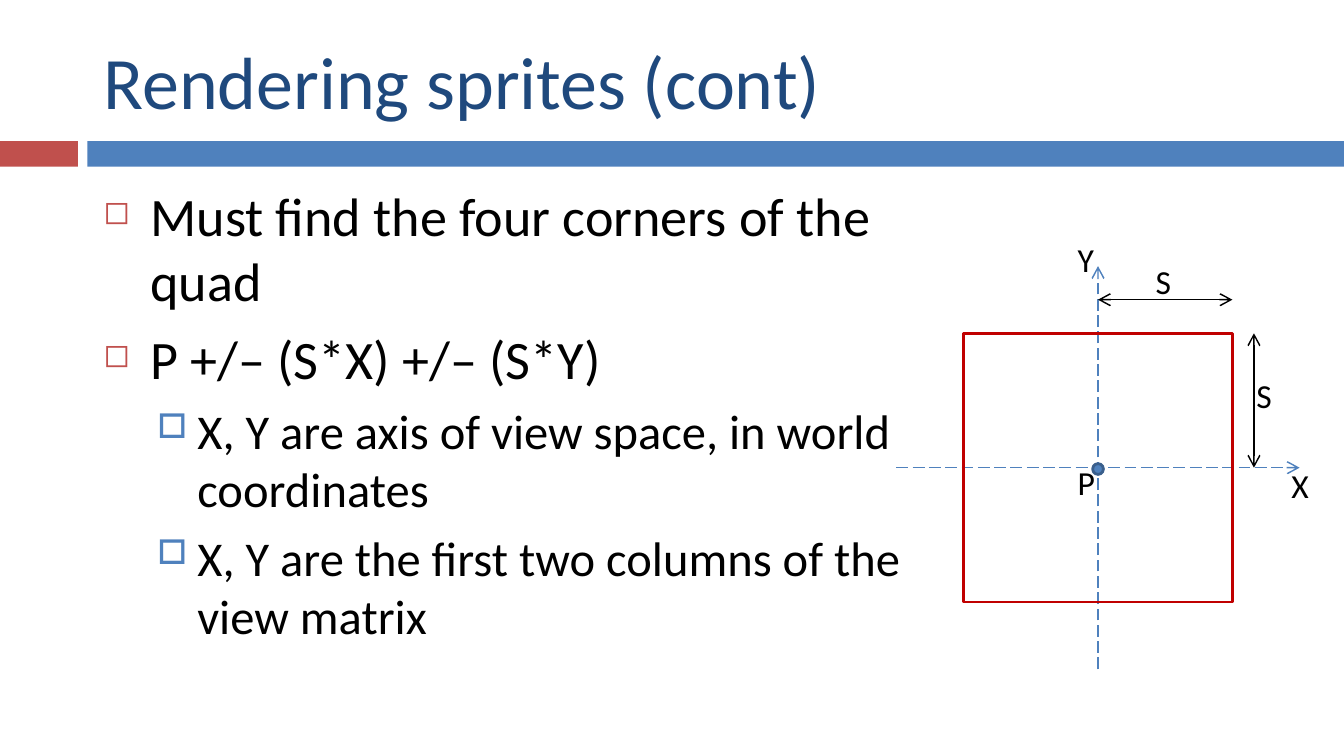
from lxml import etree
from pptx import Presentation
from pptx.dml.color import RGBColor
from pptx.enum.dml import MSO_LINE
from pptx.enum.shapes import MSO_CONNECTOR, MSO_SHAPE
from pptx.enum.text import MSO_ANCHOR, MSO_AUTO_SIZE, PP_ALIGN
from pptx.oxml.ns import qn
from pptx.util import Inches, Pt

RECTANGLE, ELLIPSE = MSO_SHAPE.RECTANGLE, MSO_SHAPE.OVAL
STRAIGHT = MSO_CONNECTOR.STRAIGHT
LONG_DASH = MSO_LINE.LONG_DASH
LEFT = PP_ALIGN.LEFT
TOP, MIDDLE = MSO_ANCHOR.TOP, MSO_ANCHOR.MIDDLE
FIT_SHAPE, NO_FIT = MSO_AUTO_SIZE.SHAPE_TO_FIT_TEXT, MSO_AUTO_SIZE.NONE

NAVY = RGBColor(0x1F, 0x49, 0x7D)
BLUE = RGBColor(0x4F, 0x81, 0xBD)
DARK_BLUE = RGBColor(0x3A, 0x5F, 0x8C)
BRICK = RGBColor(0xC0, 0x50, 0x4D)
RED = RGBColor(0xC0, 0x00, 0x00)
BLACK = RGBColor(0x00, 0x00, 0x00)

FONT = "Calibri"
THIN, THICK = 0.79, 1.5
PAGE_WIDTH = Inches(10)
PAGE_HEIGHT = PAGE_WIDTH * 9 // 16

# Per level: text size, space before, left indent, hanging, bullet, colour, bullet %
LEVELS = [
    (29, 7, 0.35, 0.35, "◻", BRICK, 60),
    (26, 5.5, 0.7, 0.3, "□", BLUE, 70),
]
POINTS = [
    (0, "Must find the four corners of the quad"),
    (0, "P +/– (S*X) +/– (S*Y)"),
    (1, "X, Y are axis of view space, in world coordinates"),
    (1, "X, Y are the first two columns of the view matrix"),
]

# Sprite quad: centre P and half side S
CENTER_X, CENTER_Y, HALF_SIDE, AXIS_REACH = 8.17, 3.48, 1, 1.5
LABELS = [("P", 7.92, 3.39), ("S", 8.5, 1.89), ("X", 9.51, 3.41),
          ("Y", 7.92, 1.73), ("S", 9.25, 2.74)]


def place(shape, left, top, width, height):
    shape.left, shape.top = Inches(left), Inches(top)
    shape.width, shape.height = Inches(width), Inches(height)


def style_font(para, size, color):
    para.font.name = FONT
    para.font.size = Pt(size)
    para.font.color.rgb = color


def add_title(page, text):
    title = page.shapes.title
    place(title, 0.67, 0.19, 8.92, 0.81)
    frame = title.text_frame
    frame.text = text
    frame.auto_size = NO_FIT
    frame.vertical_anchor = MIDDLE
    para = frame.paragraphs[0]
    para.alignment = LEFT
    style_font(para, 39.6, NAVY)


def add_shape(page, kind, left, top, width, height, fill=None, line=None):
    shape = page.shapes.add_shape(
        kind, Inches(left), Inches(top), Inches(width), Inches(height))
    shape.shadow.inherit = False
    if fill is None:
        shape.fill.background()
    else:
        shape.fill.solid()
        shape.fill.fore_color.rgb = fill
    if line is None:
        shape.line.fill.background()
    else:
        shape.line.color.rgb = line
        shape.line.width = Pt(THICK)


def add_arrow(page, start, end, color, both_ends=False, dash=None):
    arrow = page.shapes.add_connector(
        STRAIGHT, *(Inches(value) for value in (*start, *end)))
    arrow.line.color.rgb = color
    arrow.line.width = Pt(THIN)
    if dash is not None:
        arrow.line.dash_style = dash
    properties = arrow.element.spPr
    outline = properties.find(qn("a:ln"))
    for tag in ("a:headEnd", "a:tailEnd") if both_ends else ("a:tailEnd",):
        etree.SubElement(outline, qn(tag), type="arrow")
    etree.SubElement(properties, qn("a:effectLst"))


def add_label(page, text, left, top):
    box = page.shapes.add_textbox(
        Inches(left), Inches(top), Inches(0.33), Inches(0.4))
    frame = box.text_frame
    frame.word_wrap = False
    frame.auto_size = FIT_SHAPE
    frame.text = text
    style_font(frame.paragraphs[0], 18, BLACK)


def set_bullet(para, char, color, percent, indent, hanging):
    properties = para._p.get_or_add_pPr()
    properties.set("marL", str(Inches(indent)))
    properties.set("indent", str(-Inches(hanging)))
    bullet_color = etree.SubElement(properties, qn("a:buClr"))
    etree.SubElement(bullet_color, qn("a:srgbClr"), val=str(color))
    etree.SubElement(properties, qn("a:buSzPct"), val=str(percent * 1000))
    etree.SubElement(properties, qn("a:buChar"), char=char)


def add_points(page, points):
    box = page.shapes.add_textbox(
        Inches(0.67), Inches(1.31), Inches(6.58), Inches(3.69))
    frame = box.text_frame
    frame.word_wrap = True
    frame.vertical_anchor = TOP
    for index, (level, text) in enumerate(points):
        para = frame.add_paragraph() if index else frame.paragraphs[0]
        size, space, indent, hanging, char, color, percent = LEVELS[level]
        para.text = text
        para.level = level
        para.space_before = Pt(space)
        set_bullet(para, char, color, percent, indent, hanging)
        style_font(para, size, BLACK)


def add_quad_diagram(page):
    left, right = CENTER_X - HALF_SIDE, CENTER_X + HALF_SIDE
    top = CENTER_Y - HALF_SIDE
    add_arrow(page, (CENTER_X, CENTER_Y + AXIS_REACH),
              (CENTER_X, CENTER_Y - AXIS_REACH), BLUE, dash=LONG_DASH)
    add_arrow(page, (CENTER_X - AXIS_REACH, CENTER_Y),
              (CENTER_X + AXIS_REACH, CENTER_Y), BLUE, dash=LONG_DASH)
    add_shape(page, RECTANGLE, left, top, 2 * HALF_SIDE, 2 * HALF_SIDE, line=RED)
    add_shape(page, ELLIPSE, 8.13, 3.45, 0.08, 0.08, BLUE, DARK_BLUE)
    add_arrow(page, (CENTER_X, top - 0.25), (right, top - 0.25), BLACK, both_ends=True)
    add_arrow(page, (right + 0.16, CENTER_Y), (right + 0.16, top), BLACK, both_ends=True)
    for text, label_left, label_top in LABELS:
        add_label(page, text, label_left, label_top)


def main():
    deck = Presentation()
    deck.slide_width, deck.slide_height = PAGE_WIDTH, PAGE_HEIGHT
    page = deck.slides.add_slide(deck.slide_layouts[5])
    add_shape(page, RECTANGLE, 0, 1.05, 0.58, 0.19, BRICK)
    add_shape(page, RECTANGLE, 0.65, 1.05, 9.35, 0.19, BLUE)
    add_title(page, "Rendering sprites (cont)")
    add_points(page, POINTS)
    add_quad_diagram(page)
    deck.save("out.pptx")


if __name__ == "__main__":
    main()
